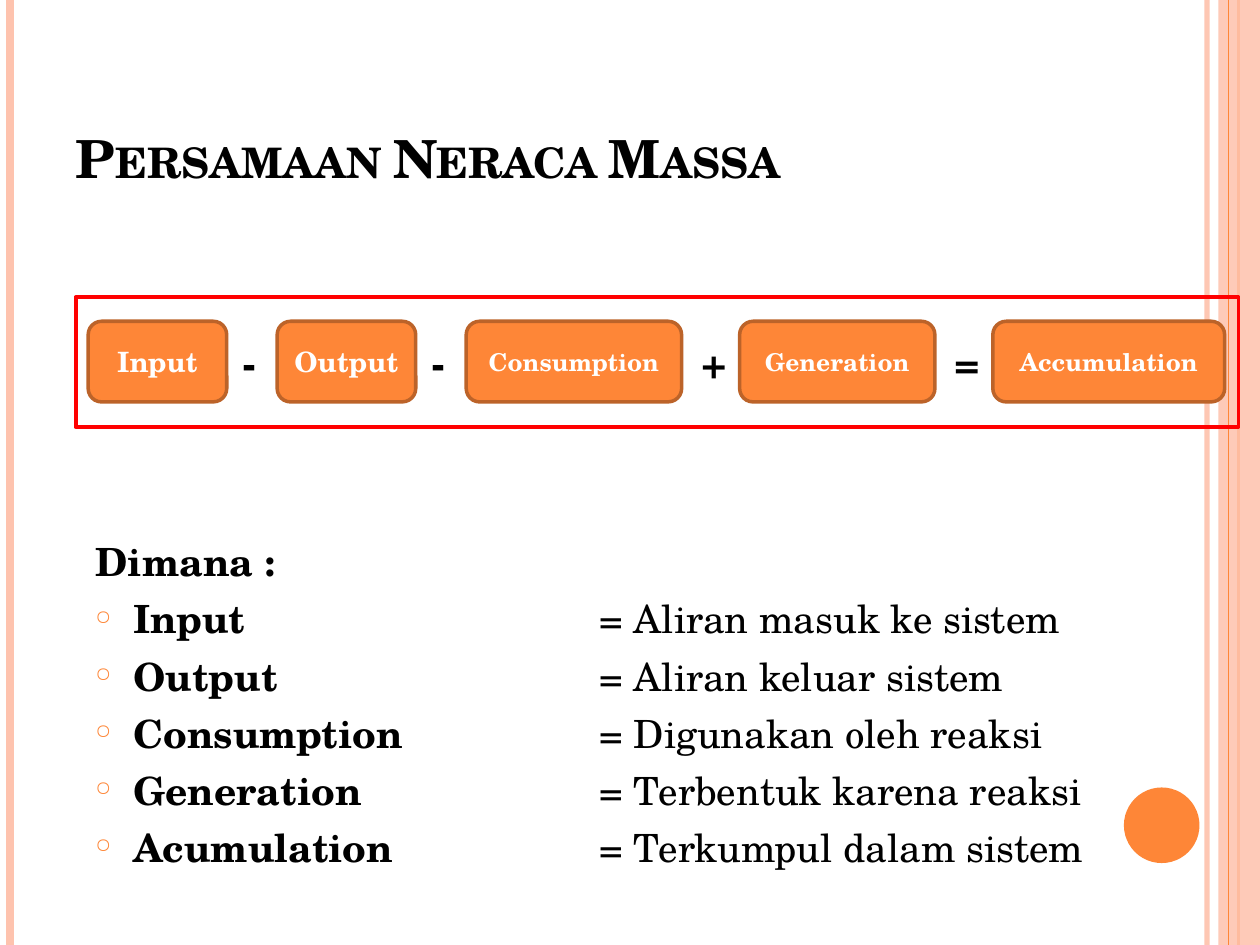
import pptx
import pptx.util
import pptx.dml.color
import pptx.enum.shapes
import pptx.enum.text
import pptx.oxml.ns
import lxml.etree

FONT = "TeX Gyre Schola"
ORANGE, PEACH, BROWN = "FE8637", "FEC3AE", "BC6329"
BLACK, WHITE, RED = "000000", "FFFFFF", "FF0000"
WIDE, HIGH = 10, 7.5

TITLE = "Persamaan Neraca Massa"
# x, colour, width in points, opacity
RULES = [(9.58, PEACH, 3, 93), (0.08, PEACH, 4.5, 100),
         (9.83, ORANGE, 1.5, 100), (9.75, ORANGE, 0.75, 100)]
# label, width, text size
TERMS = [("Input", 1.1, 16), ("Output", 1.1, 16), ("Consumption", 1.71, 14),
         ("Generation", 1.55, 14), ("Accumulation", 1.84, 14)]
# sign, gap between terms, lead before the sign's box, box width
SIGNS = [("-", 0.4, 0.03, 0.34), ("-", 0.4, 0.03, 0.34),
         ("+", 0.46, 0.06, 0.4), ("=", 0.46, 0.06, 0.4)]
HEAD = "Dimana :"
NOTES = [("Input\t", "\t\t= Aliran masuk ke sistem"),
         ("Output\t", "\t\t= Aliran keluar sistem"),
         ("Consumption", "\t\t= Digunakan oleh reaksi"),
         ("Generation", "\t\t= Terbentuk karena reaksi"),
         ("Acumulation", "\t\t= Terkumpul dalam sistem")]
TABS = [1, 2, 3, 4]

inch, pt = pptx.util.Inches, pptx.util.Pt
KIND = pptx.enum.shapes.MSO_SHAPE
ALIGN, ANCHOR = pptx.enum.text.PP_ALIGN, pptx.enum.text.MSO_ANCHOR


def rgb(code):
    return pptx.dml.color.RGBColor.from_string(code)


def sub(node, tag, **atts):
    return lxml.etree.SubElement(node, pptx.oxml.ns.qn(tag), **atts)


def fade(part, share):
    """Set the opacity, in percent, of the solid colour inside part."""
    color = next(part._element.spPr.iter(pptx.oxml.ns.qn("a:srgbClr")))
    sub(color, "a:alpha", val=str(share * 1000))


def rule(x, color, width, share):
    line = slide.shapes.add_connector(
        pptx.enum.shapes.MSO_CONNECTOR.STRAIGHT,
        inch(x), 0, inch(x), inch(HIGH))
    line.line.color.rgb = rgb(color)
    line.line.width = pt(width)
    if share < 100:
        fade(line, share)
    sub(line._element.spPr, "a:effectLst")


def shape(kind, box, fill=None, edge=None, width=0):
    item = slide.shapes.add_shape(kind, *map(inch, box))
    item.shadow.inherit = False
    if fill:
        item.fill.solid()
        item.fill.fore_color.rgb = rgb(fill)
    else:
        item.fill.background()
    if edge:
        item.line.color.rgb = rgb(edge)
        item.line.width = pt(width)
    else:
        item.line.fill.background()
    return item


def write(para, text, size, color=BLACK, bold=True):
    run = para.add_run()
    run.text = text
    style = {"name": FONT, "size": pt(size), "bold": bold}
    for key, val in style.items():
        setattr(run.font, key, val)
    run.font.color.rgb = rgb(color)
    return run


def frame(box, wrap=True, anchor=ANCHOR.TOP):
    text = slide.shapes.add_textbox(*map(inch, box)).text_frame
    text.word_wrap = wrap
    text.vertical_anchor = anchor
    return text


def bullet(para):
    """Give para a hanging ring bullet and the legend's tab stops."""
    props = para._p.get_or_add_pPr()
    props.set("marL", str(inch(0.3)))
    props.set("indent", str(-inch(0.3)))
    sub(sub(props, "a:buClr"), "a:srgbClr", val=ORANGE)
    sub(props, "a:buSzPct", val="52000")
    sub(props, "a:buChar", char="○")
    tabs = sub(props, "a:tabLst")
    for stop in TABS:
        sub(tabs, "a:tab", pos=str(inch(stop)), algn="l")


deck = pptx.Presentation()
deck.slide_width, deck.slide_height = inch(WIDE), inch(HIGH)
slide = deck.slides.add_slide(deck.slide_layouts[6])

# Side decoration
for item in RULES[:3]:
    rule(*item)
fade(shape(KIND.RECTANGLE, (9.67, 0, 0.33, HIGH), PEACH), 87)
rule(*RULES[3])
shape(KIND.OVAL, (8.92, 6.25, 0.6, 0.6), ORANGE)

# Title
text = frame((0.5, 0.3, 8.17, 1.25), anchor=ANCHOR.BOTTOM)
run = write(text.paragraphs[0], TITLE, 30)
run.font._element.set("cap", "small")

# Balance equation
left, top = 0.7, 2.55
for i, (label, width, size) in enumerate(TERMS):
    card = shape(KIND.ROUNDED_RECTANGLE, (left, top, width, 0.64),
                 ORANGE, BROWN, 2)
    card.text_frame.vertical_anchor = ANCHOR.MIDDLE
    para = card.text_frame.paragraphs[0]
    para.alignment = ALIGN.CENTER
    write(para, label, size, WHITE)
    left += width
    if i < len(SIGNS):
        sign, gap, lead, span = SIGNS[i]
        text = frame((left + lead, top + 0.07, span, 0.5), wrap=False)
        write(text.paragraphs[0], sign, 24)
        left += gap
shape(KIND.RECTANGLE, (0.6, 2.36, 9.23, 1.03), edge=RED, width=2.25)

# Legend
text = frame((0.66, 4.22, 8.13, 2.64))
para = text.paragraphs[0]
para.space_before = pt(6)
write(para, HEAD, 22.2)
for term, sense in NOTES:
    para = text.add_paragraph()
    para.space_before = pt(6)
    bullet(para)
    write(para, term, 22.2)
    write(para, sense, 22.2, bold=False)

deck.save("out.pptx")
